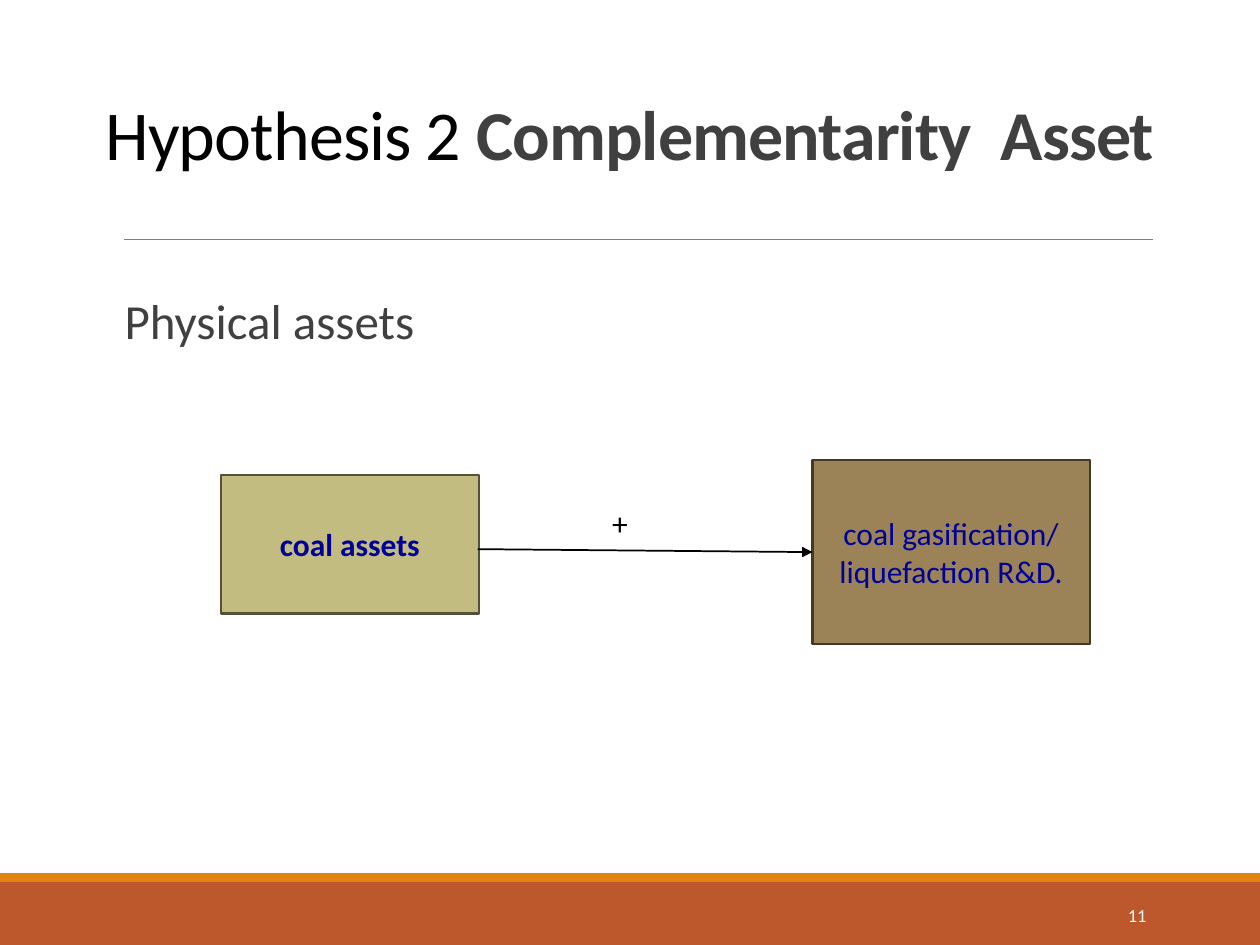
from lxml import etree
from pptx import Presentation
from pptx.dml.color import RGBColor
from pptx.enum.shapes import MSO_CONNECTOR, MSO_SHAPE
from pptx.enum.text import MSO_ANCHOR, MSO_AUTO_SIZE, PP_ALIGN
from pptx.oxml.ns import qn
from pptx.util import Cm, Pt


def color(value):
    return RGBColor.from_string(value)


def write(shape, runs, frame_format, paragraph_format):
    frame = shape.text_frame
    for name, value in {"word_wrap": True, "auto_size": MSO_AUTO_SIZE.NONE, **frame_format}.items():
        setattr(frame, name, value)
    paragraph = frame.paragraphs[0]
    for name, value in paragraph_format.items():
        setattr(paragraph, name, value)
    for text, size, font_color, bold in runs:
        run = paragraph.add_run()
        run.text = text
        for name, value in {"name": "Calibri", "size": Pt(size), "bold": bold}.items():
            setattr(run.font, name, value)
        run.font.color.rgb = color(font_color)
    return paragraph


presentation = Presentation()
presentation.slide_width, presentation.slide_height = Cm(25.4), Cm(19.05)
slide = presentation.slides.add_slide(presentation.slide_layouts[1])
shapes = slide.shapes
title, body = shapes.title, slide.placeholders[1]

middle = {"vertical_anchor": MSO_ANCHOR.MIDDLE}
centered = {"alignment": PP_ALIGN.CENTER}

for placeholder, box in (
    (title, (0, 0.79, 25.4, 2.87)),
    (body, (2.24, 5.87, 20.96, 11.18)),
):
    for name, value in zip(("left", "top", "width", "height"), box):
        setattr(placeholder, name, Cm(value))

heading = write(
    title,
    [("Hypothesis 2", 40, "000000", False), (" Complementarity  Asset", 40, "404040", True)],
    {"vertical_anchor": MSO_ANCHOR.BOTTOM},
    {**centered, "line_spacing": 0.85},
)
for run in heading.runs:
    run.font._element.set("spc", "-50")

item = write(
    body,
    [("Physical assets", 28, "404040", False)],
    {"vertical_anchor": MSO_ANCHOR.TOP, "margin_left": 0, "margin_right": 0},
    {"line_spacing": 0.9, "space_before": Pt(12), "space_after": Pt(2)},
)
properties = item._p.get_or_add_pPr()
properties.set("marL", str(Cm(0.25)))
properties.set("indent", str(Cm(-0.25)))
etree.SubElement(properties, qn("a:buChar")).set("char", " ")

for box, fill, outline, text, bold in (
    ((0, 17.78, 25.4, 1.27), "BD582C", None, None, False),
    ((0, 17.6, 25.4, 0.18), "E48312", None, None, False),
    ((4.45, 9.58, 5.21, 2.79), "C2BC80", "555238", "coal assets", True),
    ((16.38, 9.27, 5.59, 3.71), "9B8357", "443926", "coal gasification/ liquefaction R&D.", False),
):
    shape = shapes.add_shape(MSO_SHAPE.RECTANGLE, *map(Cm, box))
    shape.shadow.inherit = False
    shape.fill.solid()
    shape.fill.fore_color.rgb = color(fill)
    if outline:
        shape.line.color.rgb = color(outline)
        shape.line.width = Pt(1.25)
        write(shape, [(text, 18, "000099", bold)], middle, centered)
    else:
        shape.line.fill.background()

for ends, line_color, width, arrow in (
    ((2.49, 4.83, 23.24, 4.83), "808080", 0.5, False),
    ((9.63, 11.07, 16.38, 11.13), "000000", 1, True),
):
    connector = shapes.add_connector(MSO_CONNECTOR.STRAIGHT, *map(Cm, ends))
    connector.line.color.rgb = color(line_color)
    connector.line.width = Pt(width)
    if arrow:
        etree.SubElement(connector.line._get_or_add_ln(), qn("a:tailEnd")).set("type", "triangle")
    etree.SubElement(connector._element.spPr, qn("a:effectLst"))

for box, text, size, font_color, frame_format, paragraph_format in (
    ((20.62, 17.93, 2.74, 1.02), "11", 10.5, "FFFFFF", middle, {"alignment": PP_ALIGN.RIGHT}),
    ((12.09, 10.03, 1.27, 1.02), "+", 18, "000000", {"auto_size": MSO_AUTO_SIZE.SHAPE_TO_FIT_TEXT}, {}),
):
    label = shapes.add_textbox(*map(Cm, box))
    write(label, [(text, size, font_color, False)], frame_format, paragraph_format)

presentation.save("out.pptx")
